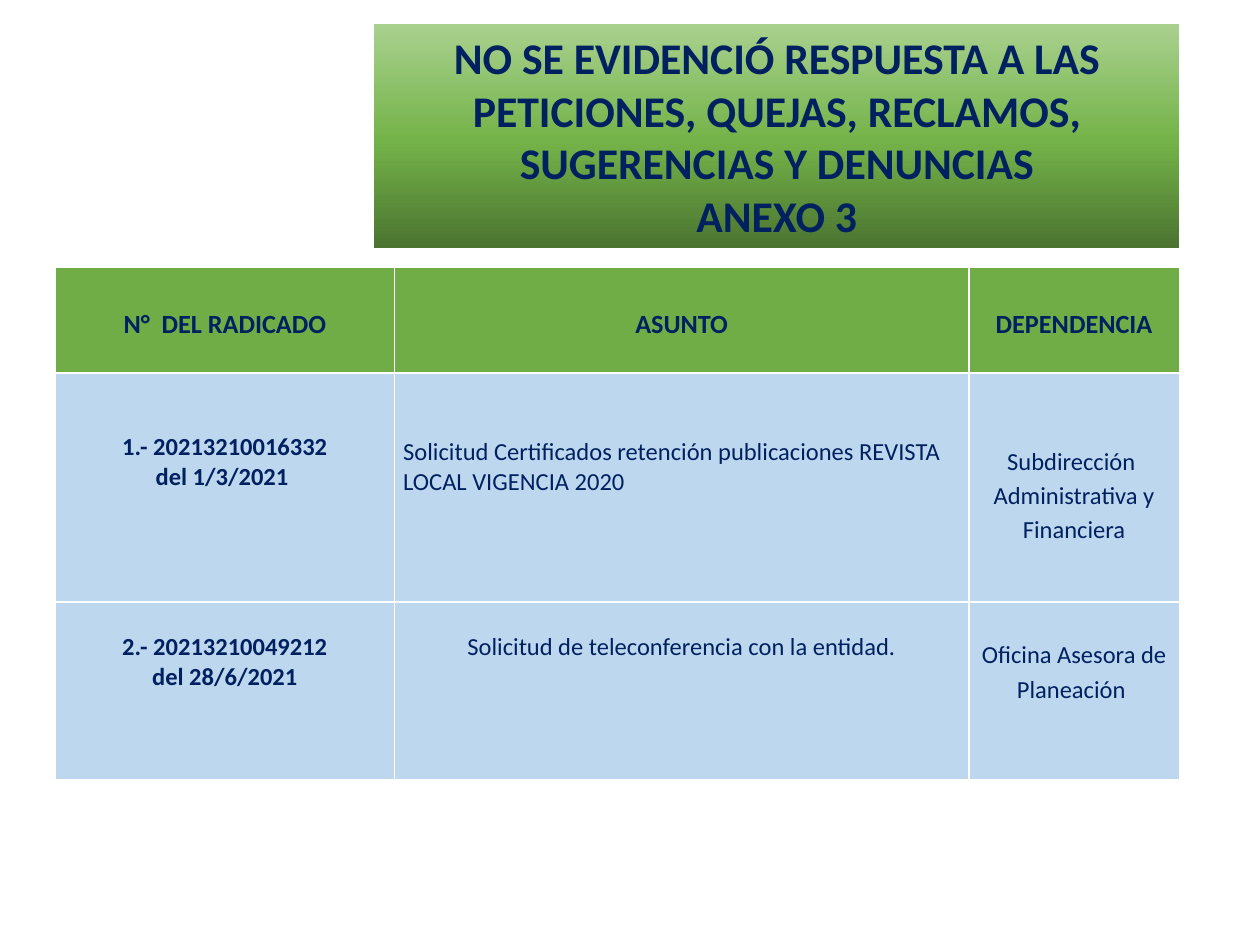
"""Build the slide listing petitions that show no evidence of a reply."""
from copy import deepcopy

from lxml.etree import fromstring
from pptx import Presentation
from pptx.dml.color import RGBColor
from pptx.enum.shapes import MSO_SHAPE
from pptx.enum.text import MSO_ANCHOR, PP_ALIGN
from pptx.oxml.ns import nsdecls
from pptx.util import Inches, Pt

NAVY = RGBColor(0x00, 0x20, 0x60)
GREEN = RGBColor(0x70, 0xAD, 0x47)
PALE_BLUE = RGBColor(0xBD, 0xD7, 0xEE)
WHITE = RGBColor(0xFF, 0xFF, 0xFF)
GRADIENT = [
    (0, RGBColor(0x4B, 0x74, 0x30)),
    (0.48, RGBColor(0x74, 0xB3, 0x49)),
    (1, RGBColor(0xA9, 0xD1, 0x8E)),
]
FONT = "Calibri"

TITLE = [
    "NO SE EVIDENCIÓ RESPUESTA A LAS PETICIONES, QUEJAS, RECLAMOS, SUGERENCIAS Y DENUNCIAS",
    "ANEXO 3",
]
HEADERS = [["N°  DEL RADICADO"], ["ASUNTO"], ["DEPENDENCIA"]]
REQUESTS = [
    [
        ["1.- 20213210016332", "del 1/3/2021\u00a0"],
        ["Solicitud Certificados retención publicaciones REVISTA LOCAL VIGENCIA 2020"],
        ["Subdirección ", "Administrativa y Financiera"],
    ],
    [
        ["2.- 20213210049212", "del 28/6/2021"],
        ["Solicitud de teleconferencia con la entidad."],
        ["Oficina Asesora de Planeación "],
    ],
]
COL_WIDTHS = [2.69, 4.56, 1.67]
ROW_HEIGHTS = [0.84, 1.82, 1.41]
TOP_INSETS = [[0.29, 0.29, 0.29], [0.47, 0.51, 0.55], [0.24, 0.24, 0.27]]
LEFT, RIGHT = 0.44, 9.36


def write(tf, lines, size, bold, align=PP_ALIGN.CENTER, spacing=1.0):
    tf.text = "\n".join(lines)
    for p in tf.paragraphs:
        p.alignment = align
        p.line_spacing = spacing
        for r in p.runs:
            r.font.name = FONT
            r.font.size = Pt(size)
            r.font.bold = bold
            r.font.color.rgb = NAVY


def add_borders(cell):
    tcPr = cell._tc.get_or_add_tcPr()
    for i, side in enumerate("LRTB"):
        tcPr.insert(i, fromstring(
            f'<a:ln{side} {nsdecls("a")} w="{Pt(1)}"><a:solidFill>'
            f'<a:srgbClr val="{WHITE}"/></a:solidFill></a:ln{side}>'))


def add_title(s):
    width = 6.39
    sp = s.shapes.add_shape(MSO_SHAPE.RECTANGLE, Inches(RIGHT - width),
                            Inches(0.19), Inches(width), Inches(1.78))
    sp.shadow.inherit = False
    sp.line.fill.background()
    sp.fill.gradient()
    sp.fill.gradient_angle = 90
    gs_list = sp._element.spPr.find(".//{*}gsLst")
    gs_list.append(deepcopy(gs_list[0]))
    for stop, (position, color) in zip(sp.fill.gradient_stops, GRADIENT):
        stop.position = position
        stop.color.rgb = color
    tf = sp.text_frame
    tf.word_wrap = True
    tf.vertical_anchor = MSO_ANCHOR.MIDDLE
    write(tf, TITLE, 25, True)


def add_requests(s):
    rows = [HEADERS] + REQUESTS
    table = s.shapes.add_table(
        len(rows), len(HEADERS), Inches(LEFT), Inches(2.12),
        Inches(RIGHT - LEFT), Inches(sum(ROW_HEIGHTS))).table
    for col, width in zip(table.columns, COL_WIDTHS):
        col.width = Inches(width)
    for row, height in zip(table.rows, ROW_HEIGHTS):
        row.height = Inches(height)
    for i, row in enumerate(rows):
        for j, lines in enumerate(row):
            cell = table.cell(i, j)
            header = i == 0
            cell.fill.solid()
            cell.fill.fore_color.rgb = GREEN if header else PALE_BLUE
            add_borders(cell)
            cell.margin_left = cell.margin_right = Inches(0.07)
            cell.margin_top = Inches(TOP_INSETS[i][j])
            cell.margin_bottom = 0
            align = PP_ALIGN.LEFT if (i, j) == (1, 1) else PP_ALIGN.CENTER
            write(cell.text_frame, lines, 15 if header else 14,
                  header or j == 0, align, 1.15 if header or j == 2 else 1.0)


def main():
    prs = Presentation()
    prs.slide_width, prs.slide_height = Inches(10), Inches(7.5)
    s = prs.slides.add_slide(prs.slide_layouts[6])
    add_title(s)
    add_requests(s)
    prs.save("out.pptx")


if __name__ == "__main__":
    main()
